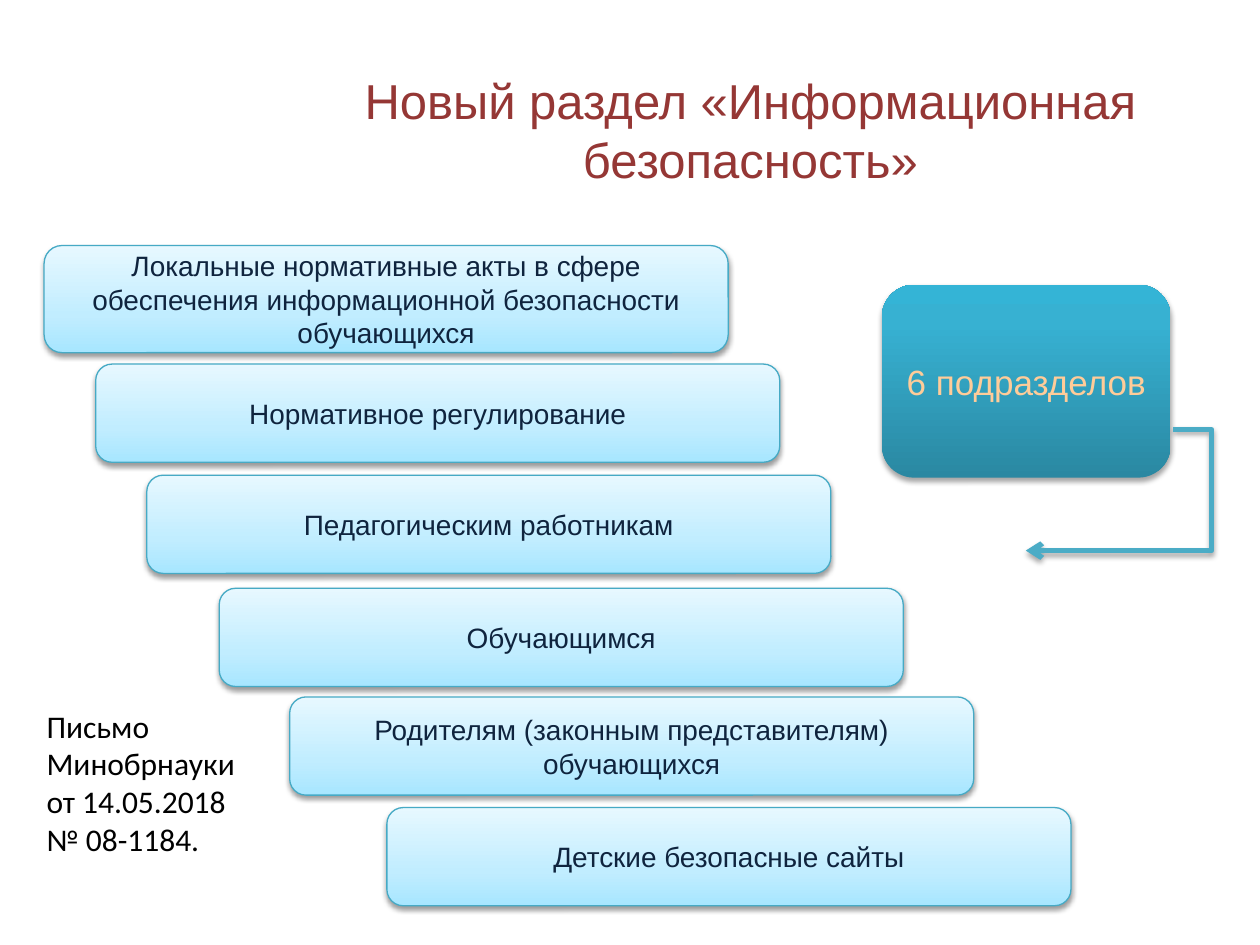
from lxml import etree
from pptx import Presentation
from pptx.dml.color import RGBColor
from pptx.enum.shapes import MSO_CONNECTOR, MSO_SHAPE
from pptx.enum.text import MSO_ANCHOR, PP_ALIGN
from pptx.oxml.ns import qn
from pptx.util import Cm, Pt

ROUNDED = MSO_SHAPE.ROUNDED_RECTANGLE
ELBOW = MSO_CONNECTOR.ELBOW
MIDDLE, TOP = MSO_ANCHOR.MIDDLE, MSO_ANCHOR.TOP
CENTER, LEFT = PP_ALIGN.CENTER, PP_ALIGN.LEFT

COLORS = {
    "title": "953735", "section": "0F243E", "count": "FFCC99",
    "note": "000000", "outline": "46AAC5", "arrow": "4BACC6",
    "shadow": "000000",
}
# Gradient stops run from the bottom edge to the top edge
PALE = [(0, "A7E6FF"), (35, "C1EDFF"), (100, "E7F8FF")]
DEEP = [(0, "2A88A2"), (80, "37B1D2"), (100, "34B4D6")]

TITLE = "Новый раздел «Информационная безопасность»"
COUNT = "6 подразделов"
NOTE = "Письмо Минобрнауки от 14.05.2018 № 08-1184."
# text, left, top, height in cm
SECTIONS = [
    ("Локальные нормативные акты в сфере обеспечения информационной "
     "безопасности обучающихся", 0.89, 4.95, 2.16),
    ("Нормативное регулирование", 1.93, 7.34, 1.98),
    ("Педагогическим работникам", 2.96, 9.58, 1.98),
    ("Обучающимся", 4.42, 11.86, 1.98),
    ("Родителям (законным представителям) обучающихся", 5.84, 14.05, 1.98),
    ("Детские безопасные сайты", 7.8, 16.28, 1.98),
]
SECTION_WIDTH = 13.79

FORMATS = {
    "title": {"size": Pt(28), "name": "Arial"},
    "section": {"size": Pt(16), "name": "Arial"},
    "count": {"size": Pt(20), "name": "Arial"},
    "note": {"size": Pt(18), "name": "Calibri"},
}


def rgb(key):
    return RGBColor.from_string(COLORS[key])


def write(sp, text, style, align=CENTER, anchor=MIDDLE):
    tf = sp.text_frame
    tf.word_wrap = True
    tf.vertical_anchor = anchor
    p = tf.paragraphs[0]
    p.alignment = align
    r = p.add_run()
    r.text = text
    for name, value in FORMATS[style].items():
        setattr(r.font, name, value)
    r.font.color.rgb = rgb(style)


def add_color(parent, value):
    return etree.SubElement(parent, qn("a:srgbClr"), val=value)


def add_shadow(sp, alpha, distance):
    """Give the shape a soft shadow straight below it."""
    effects = etree.SubElement(sp._element.spPr, qn("a:effectLst"))
    shadow = etree.SubElement(
        effects, qn("a:outerShdw"), blurRad=str(Pt(3.1)),
        dist=str(Pt(distance)), dir="5400000", rotWithShape="0")
    color = add_color(shadow, COLORS["shadow"])
    etree.SubElement(color, qn("a:alpha"), val=str(alpha * 1000))


def fill_gradient(sp, stops):
    sp.fill.gradient()
    sp.fill.gradient_angle = 90
    gs_list = sp._element.spPr.find(".//" + qn("a:gsLst"))
    for old in list(gs_list):
        gs_list.remove(old)
    for position, value in stops:
        stop = etree.SubElement(gs_list, qn("a:gs"), pos=str(position * 1000))
        add_color(stop, value)


def add_box(s, text, box, style, stops, outline, shadow):
    sp = s.shapes.add_shape(ROUNDED, *map(Cm, box))
    fill_gradient(sp, stops)
    if outline:
        sp.line.color.rgb = rgb(outline)
        sp.line.width = Pt(0.75)
    else:
        sp.line.fill.background()
    add_shadow(sp, *shadow)
    write(sp, text, style)


def add_arrow(s):
    """Lead from the count box out to the right and back to the sections."""
    line = s.shapes.add_connector(ELBOW, *map(Cm, (23.65, 8.66, 20.68, 11.1)))
    line.line.color.rgb = rgb("arrow")
    line.line.width = Pt(3)
    etree.SubElement(line.line._get_or_add_ln(), qn("a:tailEnd"), type="arrow")
    adjustments = line._element.spPr.find(".//" + qn("a:avLst"))
    etree.SubElement(adjustments, qn("a:gd"), name="adj1", fmla="val -26100")
    add_shadow(line, 35, 1.8)


def main():
    prs = Presentation()
    prs.slide_width, prs.slide_height = Cm(25.4), Cm(19.05)
    s = prs.slides.add_slide(prs.slide_layouts[6])

    write(s.shapes.add_textbox(*map(Cm, (6.12, 0.76, 18.01, 3.71))),
          TITLE, "title")
    for text, left, top, height in SECTIONS:
        add_box(s, text, (left, top, SECTION_WIDTH, height), "section",
                PALE, "outline", (38, 1.6))
    add_box(s, COUNT, (17.78, 5.74, 5.82, 3.89), "count",
            DEEP, None, (35, 1.8))
    add_arrow(s)
    write(s.shapes.add_textbox(*map(Cm, (0.69, 14.12, 4.55, 3.33))),
          NOTE, "note", LEFT, TOP)

    prs.save("out.pptx")


if __name__ == "__main__":
    main()
